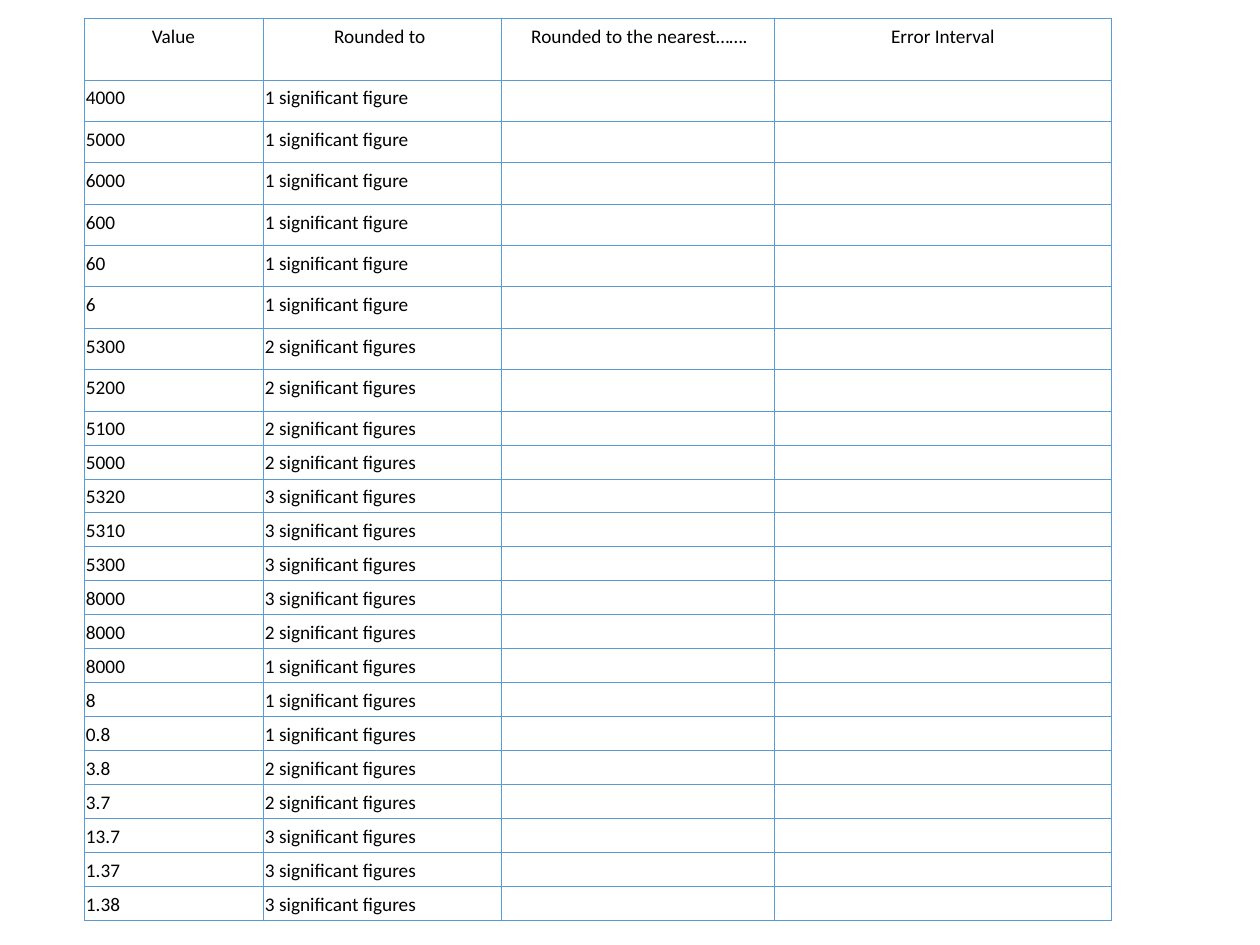
from lxml.etree import SubElement
from pptx import Presentation
from pptx.dml.color import RGBColor
from pptx.enum.text import MSO_ANCHOR, PP_ALIGN
from pptx.oxml.ns import qn
from pptx.util import Pt

HEADERS = ["Value", "Rounded to ", " Rounded to the nearest…….", "Error Interval"]
ROUNDINGS = [
    ("4000", "1 significant figure"),
    ("5000", "1 significant figure"),
    ("6000", "1 significant figure"),
    ("600", "1 significant figure"),
    ("60", "1 significant figure"),
    ("6", "1 significant figure"),
    ("5300", "2 significant figures"),
    ("5200", "2 significant figures"),
    ("5100", "2 significant figures"),
    ("5000", "2 significant figures"),
    ("5320", "3 significant figures"),
    ("5310", "3 significant figures"),
    ("5300", "3 significant figures"),
    ("8000", "3 significant figures"),
    ("8000", "2 significant figures"),
    ("8000", "1 significant figures"),
    ("8", "1 significant figures"),
    ("0.8", "1 significant figures"),
    ("3.8", "2 significant figures"),
    ("3.7", "2 significant figures"),
    ("13.7", "3 significant figures"),
    ("1.37", "3 significant figures"),
    ("1.38", "3 significant figures"),
]
COLORS = {"text": "000000", "border": "5B9BD5"}

PX = 914400 / 126
SLIDE_SIZE = (1260, 945)
TABLE_LEFT, TABLE_TOP = 84, 18
COLUMN_WIDTHS = [179, 238, 273, 338]
HEADER_HEIGHT = 62
TALL_ROWS, TALL_ROWS_HEIGHT = 8, 331
SHORT_ROW_HEIGHT = 34
CELL_INSET = 2
FONT_SIZE = 11


def px(length):
    return round(length * PX)


def write_text(cell, text, size=FONT_SIZE, font="Calibri", color="text", align=PP_ALIGN.LEFT):
    paragraph = cell.text_frame.paragraphs[0]
    paragraph.alignment = align
    if not text:
        SubElement(paragraph._p, qn("a:endParaRPr"), sz=str(size * 100))
        return
    paragraph.line_spacing = 1.19
    paragraph.space_after = Pt(6)
    run = paragraph.add_run()
    run.text = text
    run.font.size = Pt(size)
    run.font.name = font
    run.font.color.rgb = RGBColor.from_string(COLORS[color])


def format_cell(cell):
    cell.margin_left = cell.margin_right = px(CELL_INSET)
    cell.margin_top = cell.margin_bottom = px(CELL_INSET)
    cell.vertical_anchor = MSO_ANCHOR.TOP
    properties = cell._tc.get_or_add_tcPr()
    for side in ("a:lnL", "a:lnR", "a:lnT", "a:lnB"):
        line = SubElement(properties, qn(side), w=str(Pt(0.5)))
        fill = SubElement(line, qn("a:solidFill"))
        SubElement(fill, qn("a:srgbClr"), val=COLORS["border"])
    cell.fill.background()


presentation = Presentation()
presentation.slide_width, presentation.slide_height = map(px, SLIDE_SIZE)
slide = presentation.slides.add_slide(presentation.slide_layouts[6])

rows = [HEADERS] + [(value, rounding, "", "") for value, rounding in ROUNDINGS]
short_rows = len(ROUNDINGS) - TALL_ROWS
row_heights = (
    [HEADER_HEIGHT]
    + [TALL_ROWS_HEIGHT / TALL_ROWS] * TALL_ROWS
    + [SHORT_ROW_HEIGHT] * short_rows
)
table = slide.shapes.add_table(
    len(rows), len(HEADERS), px(TABLE_LEFT), px(TABLE_TOP),
    px(sum(COLUMN_WIDTHS)), px(sum(row_heights)),
).table
table.first_row = False
table.horz_banding = False

for column, width in zip(table.columns, COLUMN_WIDTHS):
    column.width = px(width)
for row, height in zip(table.rows, row_heights):
    row.height = px(height)

for row_index, texts in enumerate(rows):
    align = PP_ALIGN.CENTER if row_index == 0 else PP_ALIGN.LEFT
    for column_index, text in enumerate(texts):
        cell = table.cell(row_index, column_index)
        format_cell(cell)
        write_text(cell, text, align=align)

presentation.save("out.pptx")
